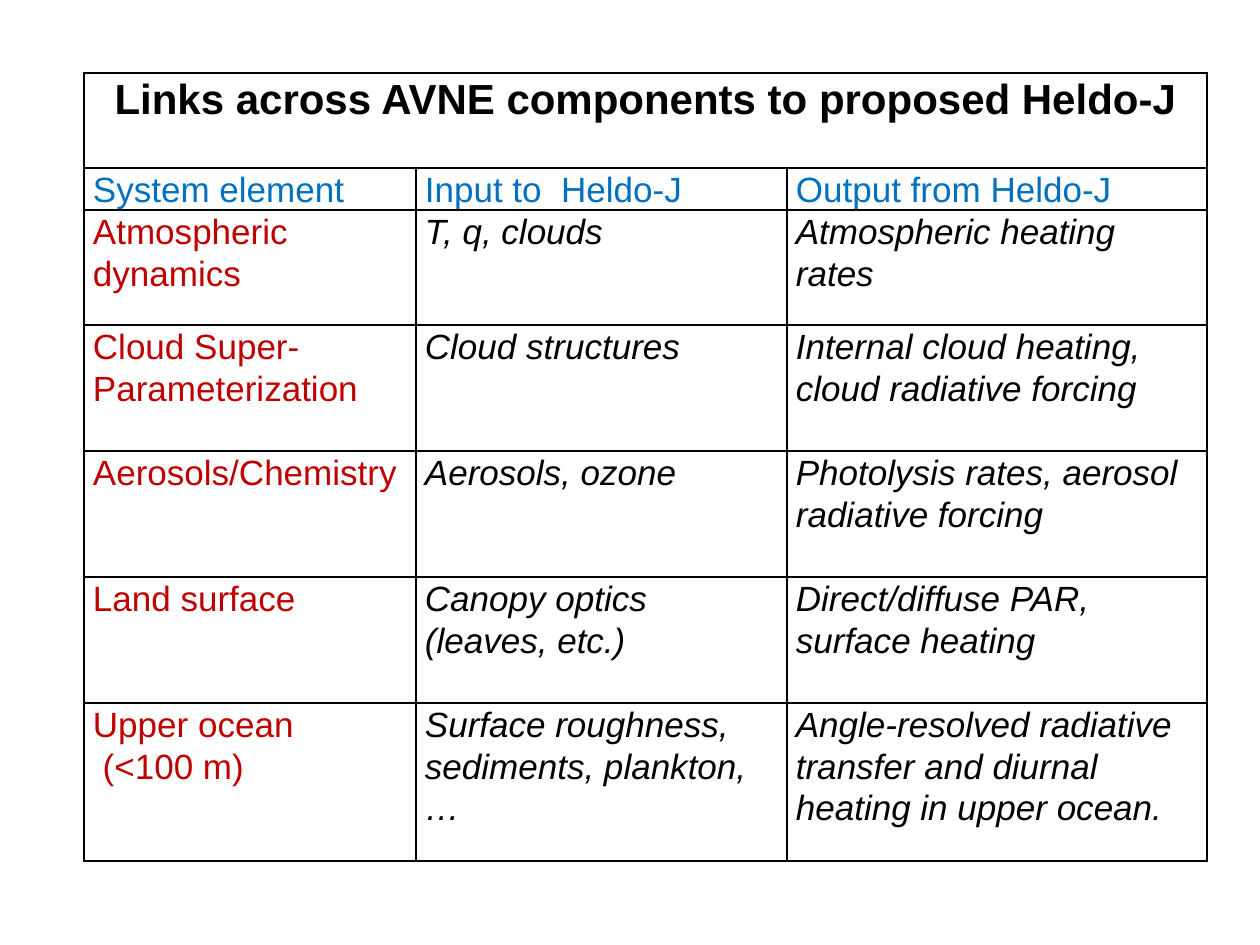
from lxml import etree
from pptx import Presentation
from pptx.dml.color import RGBColor
from pptx.enum.text import PP_ALIGN
from pptx.oxml.ns import qn
from pptx.util import Pt

PX = 914400 / 126
BLACK = RGBColor(0x00, 0x00, 0x00)
BLUE = RGBColor(0x00, 0x70, 0xC0)
RED = RGBColor(0xC0, 0x00, 0x00)
LEFT, CENTER = PP_ALIGN.LEFT, PP_ALIGN.CENTER

TITLE = {"size": Pt(24), "bold": True, "italic": False}
HEADER = {"size": Pt(20), "bold": False, "italic": False}
BODY = {"size": Pt(20), "bold": False, "italic": True}

COLUMNS = [332, 371, 420]
ROWS = [95, 42, 115, 126, 126, 126, 158]
HEADINGS = ["System element", "Input to  Heldo-J", "Output from Heldo-J"]
LINKS = [
    ["Atmospheric dynamics", "T, q, clouds", "Atmospheric heating rates"],
    ["Cloud Super-Parameterization", "Cloud structures",
     "Internal cloud heating, cloud radiative forcing"],
    ["Aerosols/Chemistry", "Aerosols, ozone",
     "Photolysis rates, aerosol radiative forcing"],
    ["Land surface", "Canopy optics (leaves, etc.)",
     "Direct/diffuse PAR, surface heating"],
    ["Upper ocean\n (<100 m)", "Surface roughness, sediments, plankton, …",
     "Angle-resolved radiative transfer and diurnal heating in upper ocean."],
]


def px(n):
    return round(n * PX)


class SlideBuilder:
    font = "Arial"
    spacing = 1.07
    margin = 9
    border = Pt(1)

    def __init__(self, s):
        self.s = s

    def table(self, x, y, widths, heights):
        frame = self.s.shapes.add_table(
            len(heights), len(widths), px(x), px(y),
            px(sum(widths)), px(sum(heights)))
        table = frame.table
        table.first_row = table.horz_banding = False
        for column, width in zip(table.columns, widths):
            column.width = px(width)
        for row, height in zip(table.rows, heights):
            row.height = px(height)
        for cell in table.iter_cells():
            self.cell_frame(cell)
        return table

    def cell_frame(self, cell):
        cell.margin_left = cell.margin_right = px(self.margin)
        cell.margin_top = cell.margin_bottom = 0
        props = cell._tc.get_or_add_tcPr()
        for side in ("lnL", "lnR", "lnT", "lnB"):
            line = etree.SubElement(props, qn(f"a:{side}"), w=str(self.border))
            fill = etree.SubElement(line, qn("a:solidFill"))
            etree.SubElement(fill, qn("a:srgbClr"), val=str(BLACK))
        cell.fill.background()

    def text(self, cell, text, style, color, align=LEFT):
        tf = cell.text_frame
        for i, words in enumerate(text.split("\n")):
            p = tf.add_paragraph() if i else tf.paragraphs[0]
            p.alignment = align
            p.line_spacing = self.spacing
            r = p.add_run()
            r.text = words
            r.font.name = self.font
            r.font.color.rgb = color
            for name, value in style.items():
                setattr(r.font, name, value)


def main():
    prs = Presentation()
    prs.slide_width, prs.slide_height = px(1260), px(945)
    slide = SlideBuilder(prs.slides.add_slide(prs.slide_layouts[6]))

    table = slide.table(84, 73, COLUMNS, ROWS)
    title = table.cell(0, 0)
    title.merge(table.cell(0, 2))
    slide.text(title, "Links across AVNE components to proposed Heldo-J",
               TITLE, BLACK, CENTER)

    for col, heading in enumerate(HEADINGS):
        slide.text(table.cell(1, col), heading, HEADER, BLUE)
    for row, (element, *flows) in enumerate(LINKS, start=2):
        slide.text(table.cell(row, 0), element, HEADER, RED)
        for col, flow in enumerate(flows, start=1):
            slide.text(table.cell(row, col), flow, BODY, BLACK)

    prs.save("out.pptx")


if __name__ == "__main__":
    main()
